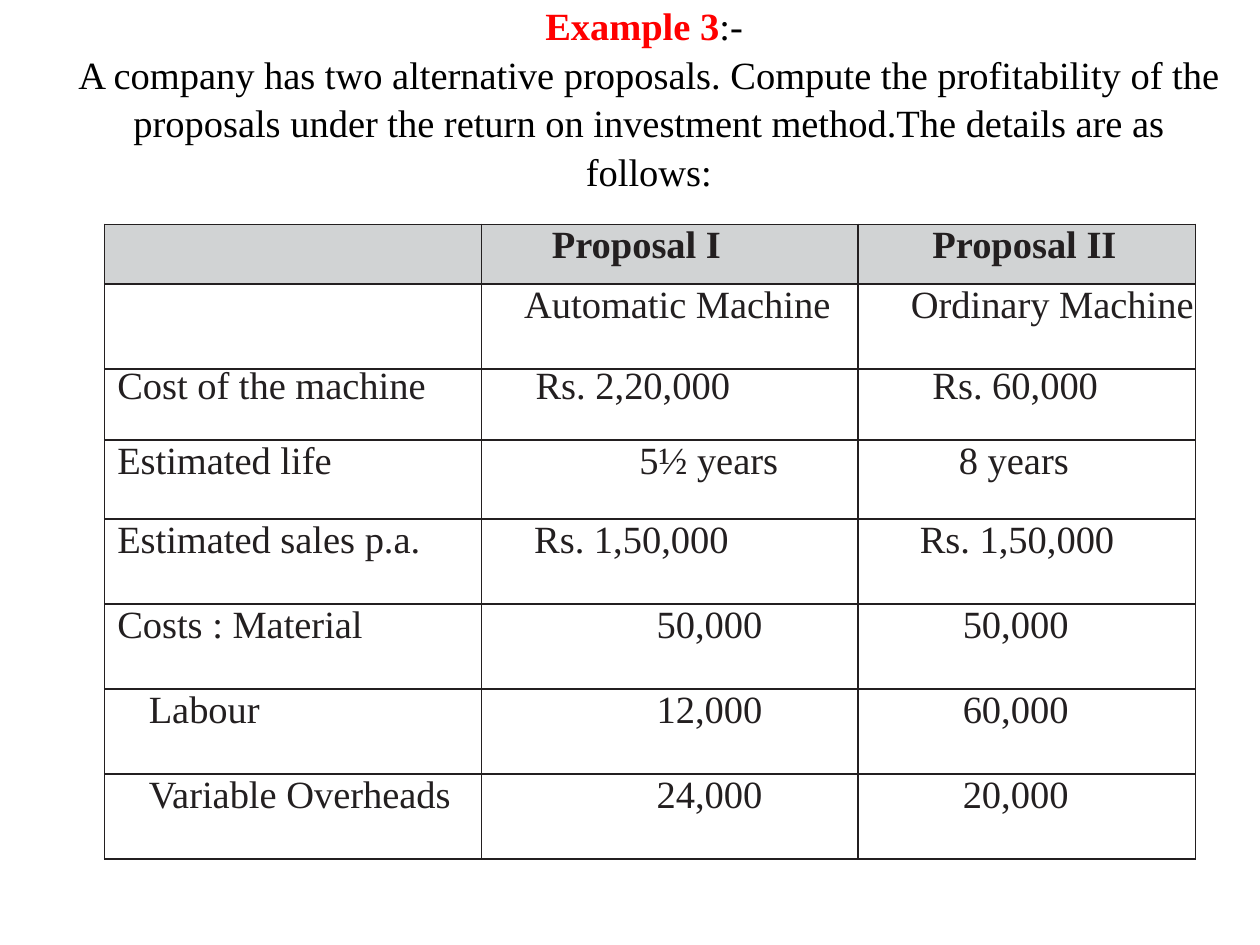
from lxml import etree
from pptx import Presentation
from pptx.dml.color import RGBColor
from pptx.enum.text import MSO_ANCHOR, MSO_AUTO_SIZE, PP_ALIGN
from pptx.oxml.ns import qn
from pptx.util import Pt

LEFT, CENTER = PP_ALIGN.LEFT, PP_ALIGN.CENTER
MIDDLE = MSO_ANCHOR.MIDDLE
NO_FIT = MSO_AUTO_SIZE.NONE
RED = RGBColor(0xFF, 0x00, 0x00)
BLACK = RGBColor(0x00, 0x00, 0x00)
INK = RGBColor(0x23, 0x1F, 0x20)
GREY = RGBColor(0xD1, 0xD3, 0xD4)
FONT, SIZE = "Times New Roman", 22
TITLE_LINES = (
    ":- ",
    "A company has two alternative proposals. Compute the profitability of the "
    "proposals under the return on investment method.The details are as follows:",
)
COLUMN_SHARES = (2.99, 2.99, 2.68)
ROW_HEIGHTS = (34.2, 48.6, 40.5, 45.2, 48.6, 48.6, 48.6, 48.6)
COST_ROW, COST_LINE = 2, 22.3
ROWS = (
    (None, ("Proposal I", 40.3, LEFT), ("Proposal II", 42.5, LEFT)),
    (None, ("Automatic Machine", 24.5, LEFT), ("Ordinary Machine", 30.2, LEFT)),
    (("Cost of the machine", 7.2, LEFT), ("Rs. 2,20,000", 31, LEFT), ("Rs. 60,000", 42.5, LEFT)),
    (("Estimated life", 7.2, LEFT), ("5½ years", 44.6, CENTER), ("8 years", 57.6, LEFT)),
    (("Estimated sales p.a.", 7.2, LEFT), ("Rs. 1,50,000", 30.2, LEFT), ("Rs. 1,50,000", 35.3, LEFT)),
    (("Costs : Material", 7.2, LEFT), ("50,000", 45.4, CENTER), ("50,000", 59.8, LEFT)),
    (("Labour", 25.2, LEFT), ("12,000", 45.4, CENTER), ("60,000", 59.8, LEFT)),
    (("Variable Overheads", 25.2, LEFT), ("24,000", 45.4, CENTER), ("20,000", 59.8, LEFT)),
)


def add_run(p, text, color, bold=False):
    """Add one run in the slide's font."""
    r = p.add_run()
    r.text = text
    r.font.name, r.font.size, r.font.bold = FONT, Pt(SIZE), bold
    r.font.color.rgb = color


def fill_title(s, x, y, w, h):
    """Place the heading and the problem statement in the title placeholder."""
    sp = s.shapes.title
    sp.left, sp.top, sp.width, sp.height = Pt(x), Pt(y), Pt(w), Pt(h)
    tf = sp.text_frame
    tf.word_wrap, tf.auto_size, tf.vertical_anchor = True, NO_FIT, MIDDLE
    tf.margin_bottom = Pt(26)
    p = tf.paragraphs[0]
    p.alignment, p.line_spacing = CENTER, 1.05
    add_run(p, "Example 3", RED, True)
    add_run(p, TITLE_LINES[0], BLACK)
    p.add_line_break()
    add_run(p, TITLE_LINES[1], BLACK)


def border_cell(cell):
    """Draw a thin line on all four sides of a cell."""
    tc_pr = cell._tc.get_or_add_tcPr()
    for i, side in enumerate(("a:lnL", "a:lnR", "a:lnT", "a:lnB")):
        ln = etree.Element(qn(side), w=str(Pt(1)))
        fill = etree.SubElement(ln, qn("a:solidFill"))
        etree.SubElement(fill, qn("a:srgbClr"), val=str(INK))
        tc_pr.insert(i, ln)


def write_cell(cell, text, indent, align, bold):
    """Write one indented line of text in a cell without margins."""
    cell.margin_left = cell.margin_right = cell.margin_top = cell.margin_bottom = 0
    p = cell.text_frame.paragraphs[0]
    p.alignment = align
    p._p.get_or_add_pPr().set("marL", str(Pt(indent)))
    add_run(p, text, INK, bold)
    return p


def add_proposals(s, x, y, w):
    """Add the table that compares the two proposals."""
    frame = s.shapes.add_table(len(ROWS), len(COLUMN_SHARES), Pt(x), Pt(y), Pt(w), Pt(sum(ROW_HEIGHTS)))
    table = frame.table
    table.first_row = table.horz_banding = False
    for column, share in zip(table.columns, COLUMN_SHARES):
        column.width = Pt(w * share / sum(COLUMN_SHARES))
    for i, (height, row) in enumerate(zip(ROW_HEIGHTS, ROWS)):
        table.rows[i].height = Pt(height)
        for j, entry in enumerate(row):
            cell = table.cell(i, j)
            if i == 0:
                cell.fill.solid()
                cell.fill.fore_color.rgb = GREY
            else:
                cell.fill.background()
            border_cell(cell)
            if entry:
                p = write_cell(cell, *entry, bold=i == 0)
                if i == COST_ROW:
                    p.line_spacing = Pt(COST_LINE)


def main():
    """Build and save the slide."""
    prs = Presentation()
    prs.slide_width, prs.slide_height = Pt(720), Pt(540)
    s = prs.slides.add_slide(prs.slide_layouts[5])
    fill_title(s, 36, 21.6, 669.6, 90)
    add_proposals(s, 59.8, 128.2, 623.5)
    prs.save("out.pptx")


if __name__ == "__main__":
    main()
